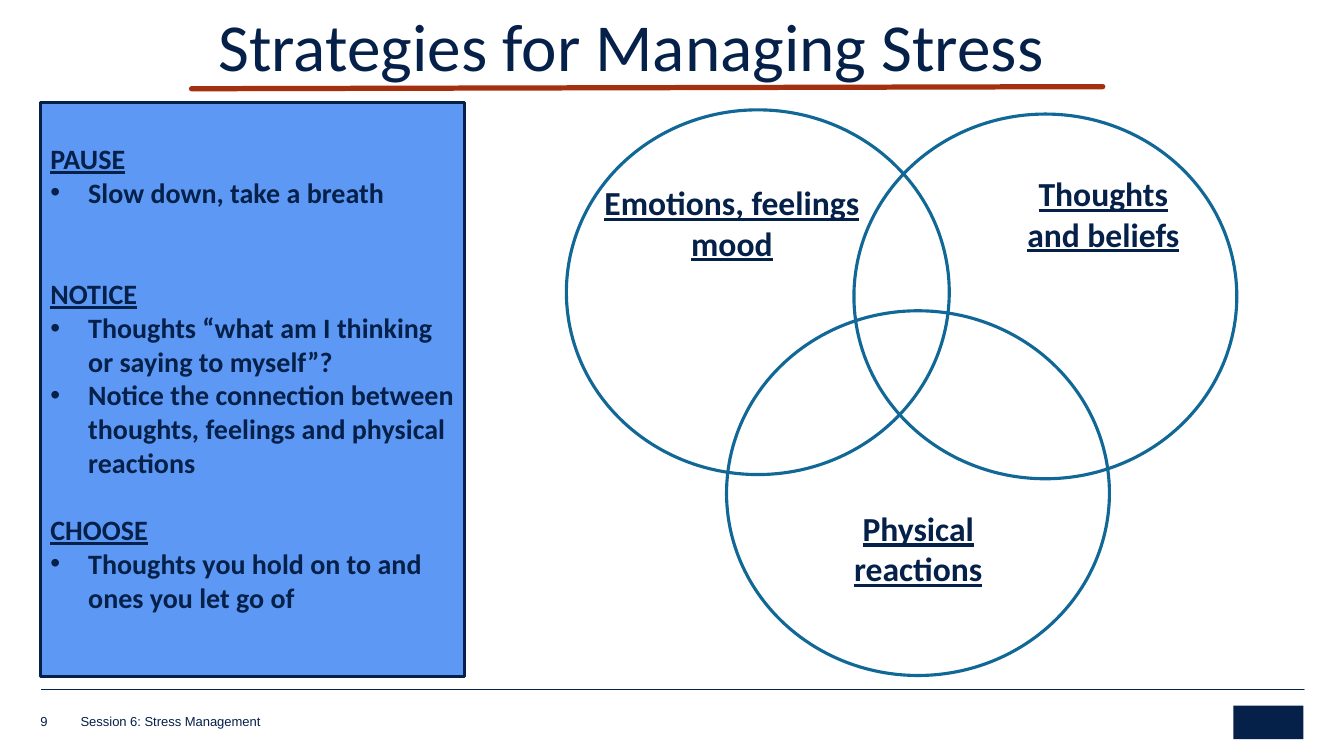
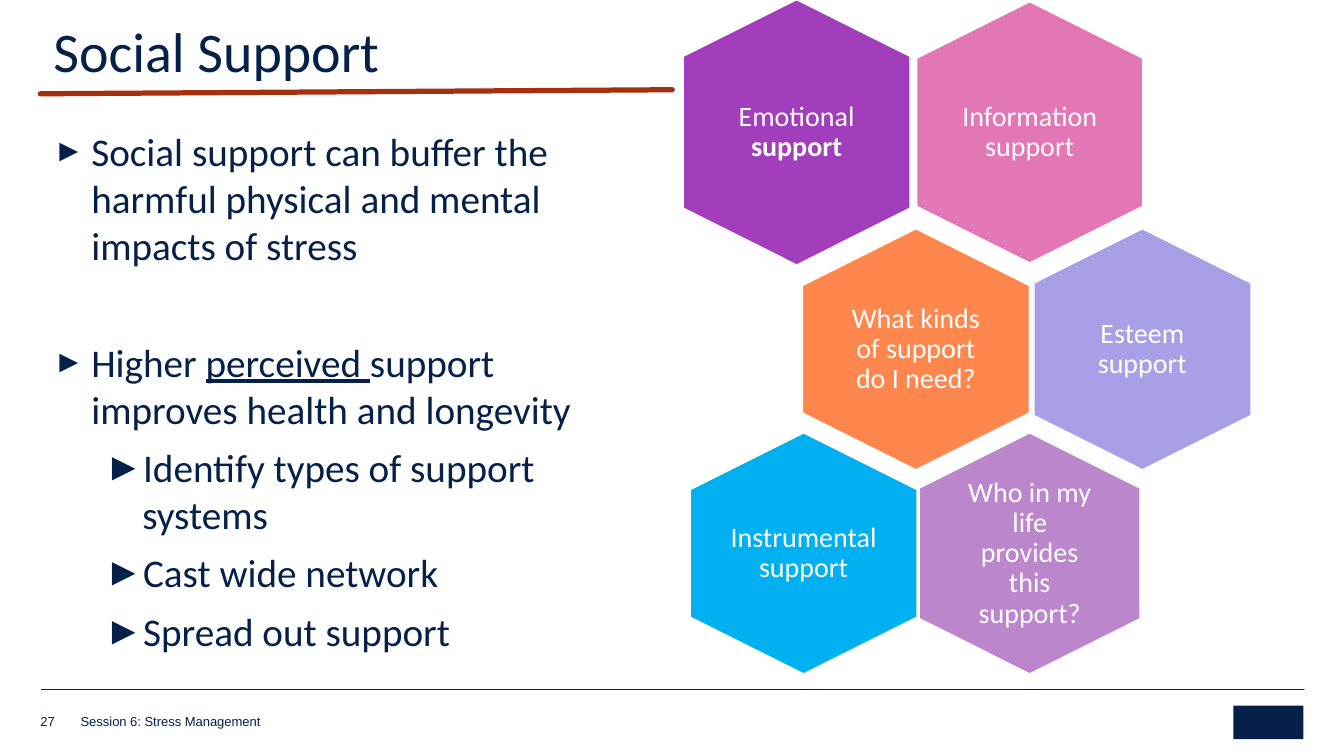
from lxml.etree import SubElement
from pptx import Presentation
from pptx.dml.color import RGBColor
from pptx.enum.shapes import MSO_CONNECTOR, MSO_SHAPE
from pptx.enum.text import MSO_ANCHOR, MSO_AUTO_SIZE, PP_ALIGN
from pptx.oxml.ns import qn
from pptx.util import Pt

NAVY, RUST, TEAL = "052049", "A5300F", "116896"
BLUE, WHITE = "5D99F4", "FFFFFF"


def color(text):
    return RGBColor.from_string(text)


class Deck:
    """Holds the shared style and the slide being drawn."""

    base = {"name": "Calibri", "bold": False, "underline": False}
    topic = "Session 6: Stress Management"

    def __init__(self):
        self.prs = Presentation()
        self.prs.slide_width, self.prs.slide_height = Pt(960), Pt(540)

    # Slide with its footer
    def start(self, number):
        self.slide = self.prs.slides.add_slide(self.prs.slide_layouts[1])
        self.shapes = self.slide.shapes
        self.line((29.5, 492.5), (931.7, 492.5), NAVY, 0.25)
        for left, wide, text in ((28.8, 26, number), (57.6, 453, self.topic)):
            self.text((left, 508, wide, 12.5), [text],
                      {"size": Pt(9.3), "name": "Arial"},
                      pad=0, anchor=MSO_ANCHOR.BOTTOM)
        self.shape(MSO_SHAPE.RECTANGLE, (881, 504, 50, 24), fill=NAVY)

    # Text
    def place(self, item, box):
        item.left, item.top, item.width, item.height = map(Pt, box)

    def bullet(self, par, char, left, hang, size=100):
        props = par._p.get_or_add_pPr()
        props.set("marL", str(Pt(left)))
        props.set("indent", str(-Pt(hang)))
        if char:
            SubElement(props, qn("a:buSzPct")).set("val", str(size * 1000))
            SubElement(props, qn("a:buFont")).set("typeface", "Arial")
            SubElement(props, qn("a:buChar")).set("char", char)
        else:
            SubElement(props, qn("a:buNone"))

    def add(self, frame, pars, font, tint=NAVY, form=None):
        """A paragraph is a string, or (runs, bullet, format, font)."""
        for i, entry in enumerate(pars):
            if isinstance(entry, str):
                entry = ([entry], None, {}, {})
            runs, mark, own, look = entry
            par = frame.paragraphs[0] if i == 0 else frame.add_paragraph()
            self.bullet(par, *(mark or (None, 0, 0)))
            values = {"space_before": Pt(0), **(form or {}), **own}
            for key, value in values.items():
                setattr(par, key, value)
            for part in runs:
                words, more = (part, {}) if isinstance(part, str) else part
                run = par.add_run()
                run.text = words
                values = {**self.base, **font, **look, **more}
                for key, value in values.items():
                    setattr(run.font, key, value)
                run.font.color.rgb = color(tint)

    def setup(self, frame, anchor, **pads):
        values = {"word_wrap": True, "auto_size": MSO_AUTO_SIZE.NONE,
                  "vertical_anchor": anchor, **pads}
        for key, value in values.items():
            setattr(frame, key, value)

    def text(self, box, pars, font, tint=NAVY, form=None, pad=None,
             anchor=MSO_ANCHOR.TOP):
        frame = self.shapes.add_textbox(*map(Pt, box)).text_frame
        sides = ("left", "top", "right", "bottom") if pad is not None else ()
        self.setup(frame, anchor, **{f"margin_{s}": Pt(pad) for s in sides})
        self.add(frame, pars, font, tint, form)

    def title(self, text, box, size):
        item = self.shapes.title
        self.place(item, box)
        self.setup(item.text_frame, MSO_ANCHOR.TOP)
        self.add(item.text_frame, [text], {"size": Pt(size)},
                 form={"line_spacing": 0.85, "alignment": PP_ALIGN.LEFT})

    def body(self, box, pars, font, form=None, top=3.6):
        item = self.slide.placeholders[1]
        self.place(item, box)
        self.setup(item.text_frame, MSO_ANCHOR.TOP, margin_top=Pt(top))
        self.add(item.text_frame, pars, font, form=form)
        return item

    # Shapes and lines
    def paint(self, item, fill=None, edge=None, width=2.25):
        if fill:
            item.fill.solid()
            item.fill.fore_color.rgb = color(fill)
        else:
            item.fill.background()
        if edge:
            item.line.color.rgb = color(edge)
            item.line.width = Pt(width)
        else:
            item.line.fill.background()

    def shape(self, kind, box, **look):
        item = self.shapes.add_shape(kind, *map(Pt, box))
        item.shadow.inherit = False
        self.paint(item, **look)
        return item

    def line(self, start, end, tint, width):
        item = self.shapes.add_connector(MSO_CONNECTOR.STRAIGHT,
                                         *map(Pt, start + end))
        item.line.color.rgb = color(tint)
        item.line.width = Pt(width)
        item.line._get_or_add_ln().set("cap", "rnd")
        SubElement(item._element.spPr, qn("a:effectLst"))

    def hexagon(self, mid, high, wide, fill, runs, room):
        """Pointed-top hexagon; room is the width of its text."""
        x, y = mid
        item = self.shape(MSO_SHAPE.HEXAGON,
                          (x - high / 2, y - wide / 2, high, wide),
                          fill=fill, edge=WHITE, width=0.85)
        item.rotation = 90
        self.text((x - room / 2, y - 60, room, 120), [(runs, None, {}, {})],
                  {"size": Pt(20)}, WHITE,
                  {"alignment": PP_ALIGN.CENTER, "line_spacing": 0.9},
                  pad=0, anchor=MSO_ANCHOR.MIDDLE)


def stress(deck):
    deck.start("9")
    deck.title("Strategies for Managing Stress", (149, 8, 741, 110), 48)
    deck.line((136.8, 63.4), (787.7, 61.9), RUST, 3.75)

    # Steps panel
    steps = (
        ("PAUSE", 0, ["Slow down, take a breath"]),
        ("NOTICE", 48.8, [
            "Thoughts “what am I thinking or saying to myself”?",
            "Notice the connection between thoughts, feelings and physical "
            "reactions"]),
        ("CHOOSE", 24.4, ["Thoughts you hold on to and ones you let go of"]),
    )
    pars = []
    for head, gap, points in steps:
        pars.append(([head], None, {"space_before": Pt(gap)},
                     {"underline": True}))
        pars += [([point], ("•", 27, 27), {}, {}) for point in points]
    panel = deck.body((28.8, 73, 303, 410), pars,
                      {"size": Pt(20), "bold": True}, top=28)
    deck.paint(panel, BLUE, NAVY)

    # Overlapping circles
    for left, top in ((404.6, 78.5), (610, 81.5), (519, 222)):
        deck.shape(MSO_SHAPE.OVAL, (left, top, 273.5, 260.5), edge=TEAL)
    labels = (
        ((422, 126.7, 201.6, 65.5), ["Emotions, feelings", "mood"]),
        ((569.5, 359.3, 172.8, 65.5), ["Physical reactions"]),
        ((722.2, 120.2, 131.8, 65.5), ["Thoughts and beliefs"]),
    )
    for box, words in labels:
        deck.text(box, words,
                  {"size": Pt(24), "bold": True, "underline": True},
                  form={"alignment": PP_ALIGN.CENTER})


def support(deck):
    deck.start("27")
    deck.title("Social Support", (31, 15.8, 461.5, 60.5), 40)
    deck.line((28.8, 67), (480.2, 64.1), RUST, 3.75)

    # List
    main, sub = ("►", 27, 27, 80), ("►", 63.4, 27)
    pars = [
        (["Social support can buffer the harmful physical and mental "
          "impacts of stress"], main, {}, {}),
        (["Higher ", ("perceived ", {"underline": True}),
          "support improves health and longevity"], main,
         {"space_before": Pt(42)}, {}),
    ]
    pars += [([point], sub, {"level": 1}, {}) for point in (
        "Identify types of support systems", "Cast wide network",
        "Spread out support")]
    deck.body((31, 87, 429, 384), pars, {"size": Pt(28)},
              {"space_after": Pt(8)})

    # Honeycomb
    kind, ask = 110, 96
    cells = (
        ((735.5, 94.5), 186.5, 161.5, "E376B5", ["Information support"], kind),
        ((569, 94.5), 189.4, 162, "A23EBB",
         ["Emotional ", ("support", {"bold": True})], kind),
        ((654.2, 249.5), 172, 162, "FF874D",
         ["What kinds of support do I need?"], ask),
        ((816, 249.5), 172, 155, "A8A0E7", ["Esteem support"], kind),
        ((735.5, 395.3), 172, 157.7, "BB86CC",
         ["Who in my life provides this support?"], ask),
        ((574, 395.3), 172, 162, "00B0F0", ["Instrumental support"], kind),
    )
    for cell in cells:
        deck.hexagon(*cell)


def main():
    deck = Deck()
    stress(deck)
    support(deck)
    deck.prs.save("out.pptx")


if __name__ == "__main__":
    main()
